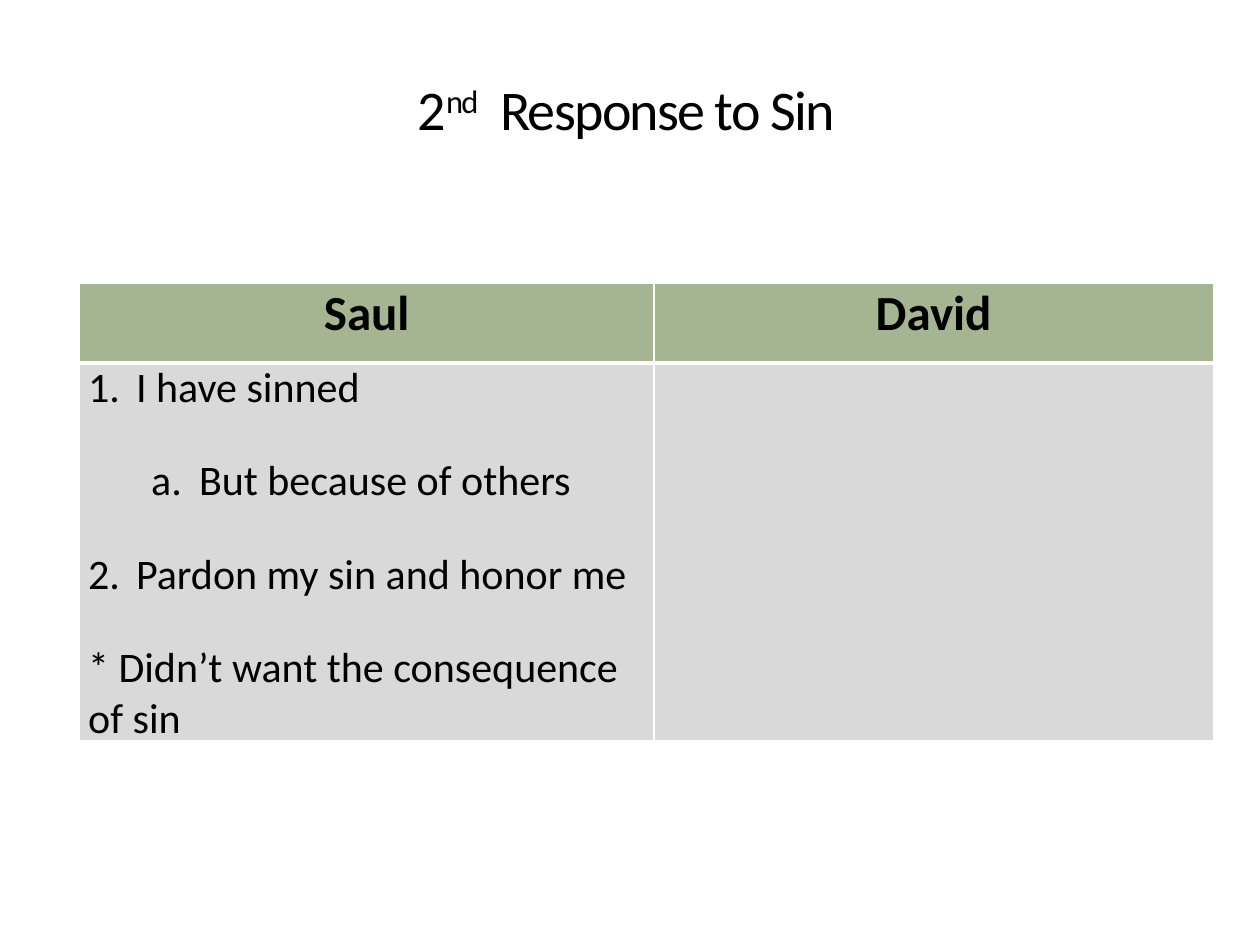
from pptx import Presentation
from pptx.util import Inches, Pt
from pptx.dml.color import RGBColor
from pptx.enum.text import PP_ALIGN, MSO_ANCHOR
from pptx.oxml import parse_xml
from pptx.oxml.ns import nsdecls

THEME = {
    "font": "Calibri", "ink": "000000", "head": "A5B592", "body": "D9D9D9",
    "rule": "FFFFFF", "title": 32, "name": 28, "point": 24,
}
TITLE = [("2", 0), ("nd", 30000), ("  Response to Sin", 0)]
NAMES = ["Saul", "David"]
POINTS = [
    ("I have sinned", 0, "arabicPeriod"),
    ("But because of others", 1, "alphaLcPeriod"),
    ("Pardon my sin and honor me", 0, "arabicPeriod"),
    ("* Didn’t want the consequence of sin", 0, None),
]
COLS = [4.56, 4.44]
ROWS = [0.63, 3]


def style(para, size, bold=False):
    font = para.font
    font.name = THEME["font"]
    font.size = Pt(size)
    font.bold = bold
    font.color.rgb = RGBColor.from_string(THEME["ink"])


def paint(cell, color, base):
    cell.margin_left = cell.margin_right = Inches(0.07)
    cell.margin_top = cell.margin_bottom = 0
    cell.fill.solid()
    cell.fill.fore_color.rgb = RGBColor.from_string(color)
    props = cell._tc.get_or_add_tcPr()
    sides = [("L", 1), ("R", 1), ("T", 4 - base if base == 1 else 1), ("B", base)]
    for spot, (side, width) in enumerate(sides):
        props.insert(spot, parse_xml(
            f'<a:ln{side} {nsdecls("a")} w="{Pt(width)}"><a:solidFill>'
            f'<a:srgbClr val="{THEME["rule"]}"/></a:solidFill></a:ln{side}>'))


def number(para, level, kind):
    para.level = level
    props = para._p.get_or_add_pPr()
    props.set("marL", str(Inches(0.38 + level * 0.5)))
    props.set("indent", str(Inches(-0.38)))
    props.append(parse_xml(f'<a:buAutoNum {nsdecls("a")} type="{kind}"/>'))


def add_title(slide):
    box = slide.shapes.add_textbox(Inches(0.28), Inches(0.42), Inches(9.38), Inches(0.75))
    frame = box.text_frame
    frame.word_wrap = True
    frame.vertical_anchor = MSO_ANCHOR.BOTTOM
    para = frame.paragraphs[0]
    para.alignment = PP_ALIGN.CENTER
    style(para, THEME["title"])
    for text, raised in TITLE:
        run = para.add_run()
        run.text = text
        props = run._r.get_or_add_rPr()
        props.set("spc", "-100")
        if raised:
            props.set("baseline", str(raised))


def add_grid(slide):
    grid = slide.shapes.add_table(
        len(ROWS), len(COLS), Inches(0.63), Inches(2.25),
        Inches(sum(COLS)), Inches(sum(ROWS))).table
    for col, width in zip(grid.columns, COLS):
        col.width = Inches(width)
    for row, height in zip(grid.rows, ROWS):
        row.height = Inches(height)
    for col, name in enumerate(NAMES):
        head, body = grid.cell(0, col), grid.cell(1, col)
        paint(head, THEME["head"], 3)
        paint(body, THEME["body"], 1)
        para = head.text_frame.paragraphs[0]
        para.text = name
        para.alignment = PP_ALIGN.CENTER
        style(para, THEME["name"], True)
    frame = grid.cell(1, 0).text_frame
    for spot, (text, level, kind) in enumerate(POINTS):
        para = frame.add_paragraph() if spot else frame.paragraphs[0]
        para.text = text
        para.space_before = para.space_after = Pt(12)
        if kind:
            number(para, level, kind)
        style(para, THEME["point"])


def main():
    deck = Presentation()
    deck.slide_width, deck.slide_height = Inches(10), Inches(7.5)
    slide = deck.slides.add_slide(deck.slide_layouts[6])
    add_title(slide)
    add_grid(slide)
    deck.save("out.pptx")


if __name__ == "__main__":
    main()
